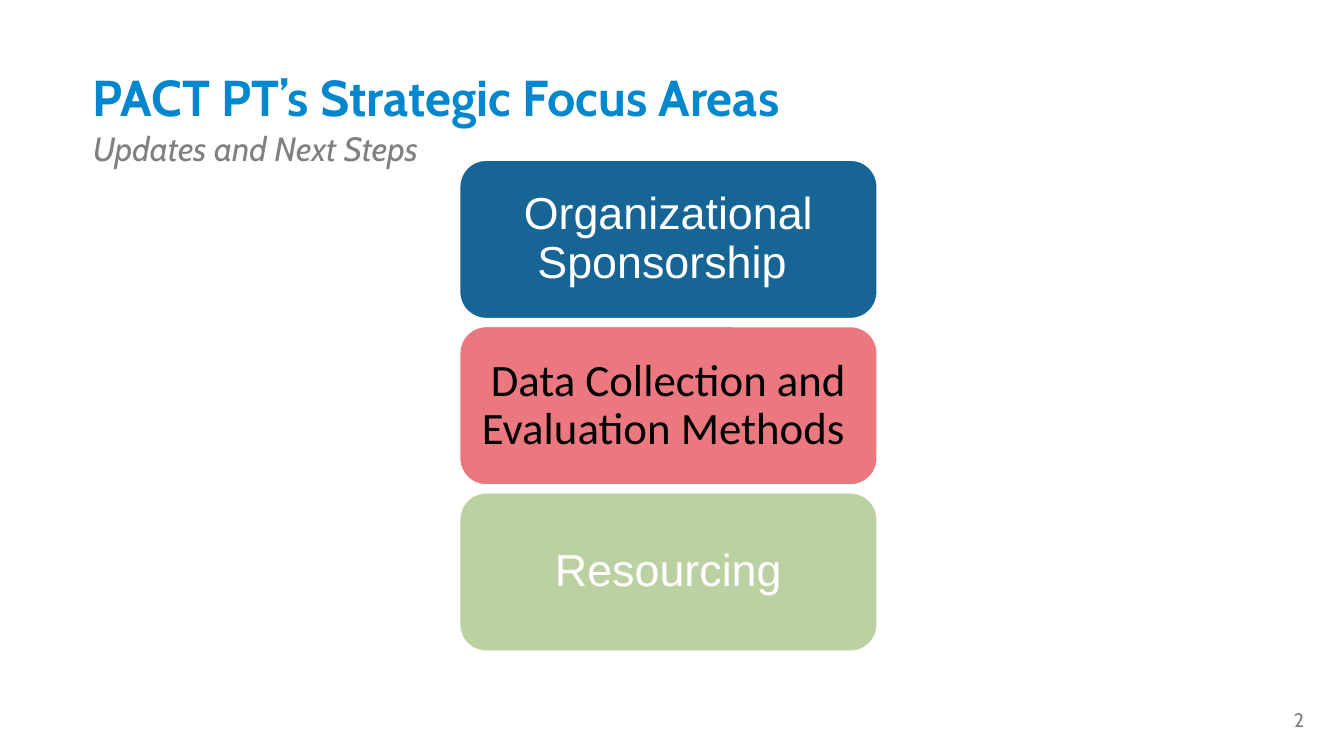
from lxml.etree import SubElement
from pptx import Presentation
from pptx.dml.color import RGBColor
from pptx.enum.shapes import MSO_SHAPE as Shape
from pptx.enum.text import MSO_ANCHOR as Anchor, MSO_AUTO_SIZE as Auto, PP_ALIGN as Align
from pptx.oxml.ns import qn
from pptx.util import Pt

TITLE = "PACT PT’s Strategic Focus Areas"
SUBTITLE = "Updates and Next Steps"
PAGE = "2"
# text, font, text colour, fill, opacity in percent
AREAS = [
    ("Organizational Sponsorship ", "Arial", "white", "blue", 100),
    ("Data Collection and Evaluation Methods ", "Calibri", "black", "pink", 100),
    ("Resourcing", "Arial", "white", "green", 40),
]
COLORS = {"white": "FFFFFF", "black": "000000", "blue": "166595", "pink": "EB787E",
          "green": "598D17", "title": "0087CD", "gray": "808080"}

PX = 9144  # 100 px to the inch
LEFT, TOP, WIDTH, HEIGHT, STEP = 456, 159, 414, 157, 165


def color(name):
    return RGBColor.from_string(COLORS[name])


def place(shape, *box):
    shape.left, shape.top, shape.width, shape.height = (n * PX for n in box)


def write(shape, text, font, size, ink, align, anchor, pad=(0, 0), spacing=1.0,
          bold=False, italic=False):
    frame = shape.text_frame
    frame.word_wrap = True
    frame.auto_size = Auto.NONE
    frame.vertical_anchor = anchor
    frame.margin_left = frame.margin_right = pad[0] * PX
    frame.margin_top = frame.margin_bottom = pad[1] * PX
    para = frame.paragraphs[0]
    para.alignment = align
    para.line_spacing = spacing
    para.space_before = Pt(0)
    run = para.add_run()
    run.text = text
    run.font.name, run.font.size = font, Pt(size)
    run.font.bold, run.font.italic = bold, italic
    run.font.color.rgb = color(ink)
    return para


deck = Presentation()
deck.slide_width, deck.slide_height = 1333 * PX, 750 * PX
slide = deck.slides.add_slide(deck.slide_layouts[1])
shapes = slide.shapes

title = shapes.title
place(title, 92, 72, 1150, 55)
write(title, TITLE, "Cabin", 36, "title", Align.LEFT, Anchor.TOP, spacing=0.9, bold=True)

body = slide.placeholders[1]
place(body, 92, 127, 1150, 37)
para = write(body, SUBTITLE, "Cabin", 24, "gray", Align.LEFT, Anchor.TOP, italic=True)
para.space_after = Pt(3)
props = para._p.get_or_add_pPr()
props.set("marL", "0")
props.set("indent", "0")
SubElement(props, qn("a:buNone"))

for row, (text, font, ink, fill, opacity) in enumerate(AREAS):
    box = (LEFT, TOP + row * STEP, WIDTH, HEIGHT)
    area = shapes.add_shape(Shape.ROUNDED_RECTANGLE, *(n * PX for n in box))
    area.shadow.inherit = False
    area.fill.solid()
    area.fill.fore_color.rgb = color(fill)
    if opacity < 100:
        tint = area._element.spPr.find(qn("a:solidFill"))[0]
        SubElement(tint, qn("a:alpha"), val=str(opacity * 1000))
    area.line.color.rgb = color("white")
    area.line.width = Pt(1)
    write(area, text, font, 32, ink, Align.CENTER, Anchor.MIDDLE, (13, 7), 0.9)

page = shapes.add_textbox(*(n * PX for n in (1243, 694, 91, 40)))
write(page, PAGE, "Cabin", 14, "gray", Align.CENTER, Anchor.MIDDLE, (10, 5))

deck.save("out.pptx")
